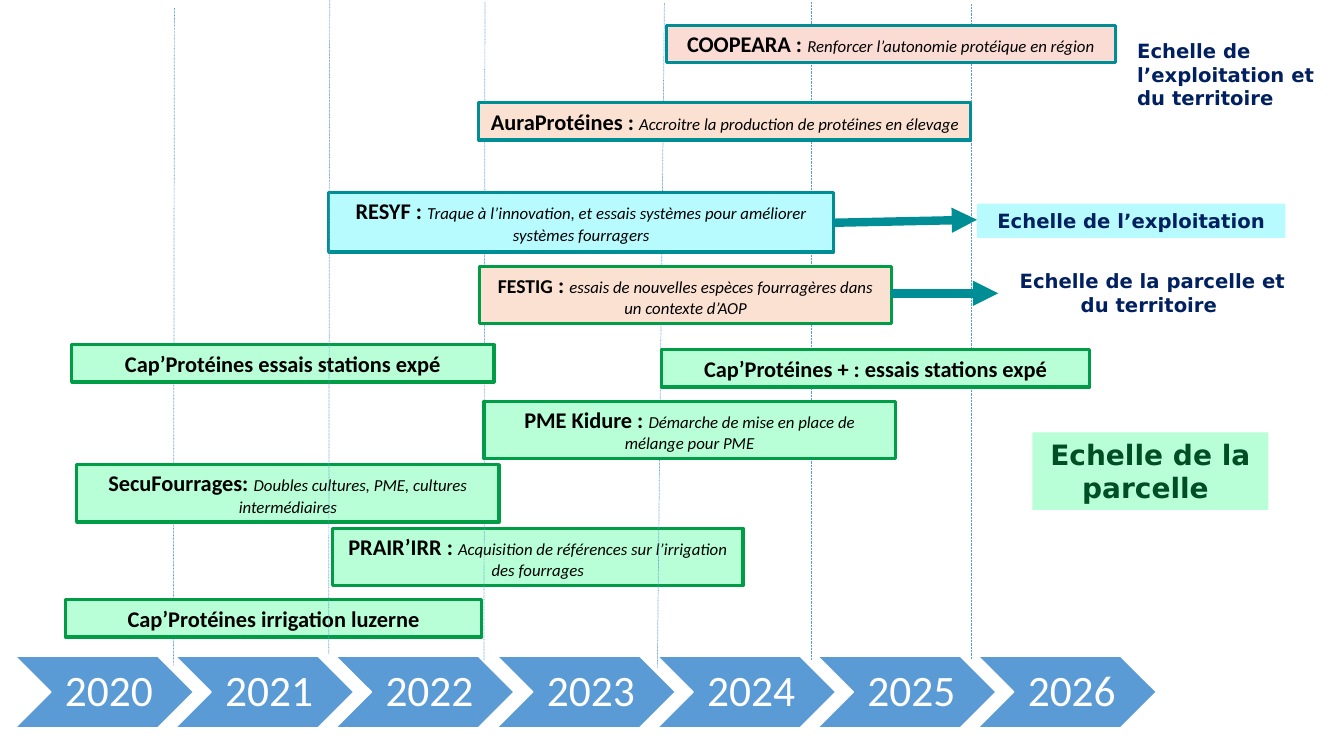
from lxml.etree import SubElement
from pptx import Presentation
from pptx.dml.color import RGBColor as RGB
from pptx.enum.dml import MSO_LINE
from pptx.enum.shapes import MSO_CONNECTOR, MSO_SHAPE
from pptx.enum.text import MSO_ANCHOR as ANCHOR, MSO_AUTO_SIZE as AUTO, PP_ALIGN as ALIGN
from pptx.oxml.ns import qn
from pptx.util import Emu, Pt

PX = 9144  # 100 px to the inch
WHITE, BLACK = RGB(255, 255, 255), RGB(0, 0, 0)
BLUE, NAVY = RGB(0x5B, 0x9B, 0xD5), RGB(0x00, 0x20, 0x60)
TEAL, GREEN = RGB(0x00, 0x8E, 0x96), RGB(0x00, 0x9C, 0x46)
MINT, CYAN = RGB(0xB8, 0xFF, 0xD8), RGB(0xB7, 0xFB, 0xFF)
PEACH, PINK = RGB(0xFB, 0xE1, 0xD2), RGB(0xFB, 0xDC, 0xD5)
FOREST = RGB(0x00, 0x4E, 0x23)

TITLE = dict(name="Calibri", size=Pt(16), bold=True)
DETAIL = dict(name="Calibri", size=Pt(12), italic=True)
YEAR = dict(name="Calibri", size=Pt(31))
SCALE = dict(name="DejaVu Sans", size=Pt(14), bold=True)
BOX_FRAME = dict(word_wrap=True, auto_size=AUTO.SHAPE_TO_FIT_TEXT,
                 vertical_anchor=ANCHOR.TOP)
YEAR_FRAME = dict(word_wrap=False, vertical_anchor=ANCHOR.MIDDLE,
                  margin_left=Emu(14 * PX), margin_right=Emu(5 * PX),
                  margin_top=Emu(5 * PX), margin_bottom=Emu(5 * PX))


def set_all(obj, values):
    for key, value in values.items():
        setattr(obj, key, value)


class Timeline:
    def __init__(self, slide):
        self.shapes = slide.shapes

    def text(self, sp, runs, color, frame, align=ALIGN.CENTER):
        tf = sp.text_frame
        set_all(tf, frame)
        p = tf.paragraphs[0]
        p.alignment = align
        for words, fmt in runs:
            r = p.add_run()
            r.text = words
            set_all(r.font, fmt)
            r.font.color.rgb = color
        return p

    def shape(self, kind, at, fill, line=None, width=2.25):
        sp = self.shapes.add_shape(kind, *(Emu(v * PX) for v in at))
        sp.shadow.inherit = False
        sp.fill.solid()
        sp.fill.fore_color.rgb = fill
        if line is None:
            sp.line.fill.background()
        else:
            sp.line.color.rgb = line
            sp.line.width = Pt(width)
        return sp

    def year(self, at, label):
        sp = self.shape(MSO_SHAPE.CHEVRON, at, BLUE, WHITE, 1)
        self.text(sp, [(label, YEAR)], WHITE, YEAR_FRAME).line_spacing = 0.9

    def project(self, at, fill, line, title, detail="", **change):
        sp = self.shape(MSO_SHAPE.RECTANGLE, at, fill, line)
        runs = [(title, TITLE | change)]
        if change:
            runs.append((" : ", TITLE))
        if detail:
            runs.append((detail, DETAIL))
        self.text(sp, runs, BLACK, BOX_FRAME)

    def scale(self, at, label, fill=None, color=NAVY, align=ALIGN.CENTER, **change):
        if fill is None:
            sp = self.shapes.add_textbox(*(Emu(v * PX) for v in at))
        else:
            sp = self.shape(MSO_SHAPE.RECTANGLE, at, fill)
        self.text(sp, [(label, SCALE | change)], color, BOX_FRAME, align)

    def line(self, ends, color, width):
        cn = self.shapes.add_connector(MSO_CONNECTOR.STRAIGHT, *(Emu(v * PX) for v in ends))
        cn.line.color.rgb = color
        cn.line.width = Pt(width)
        SubElement(cn._element.spPr, qn("a:effectLst"))
        return cn.line

    def guide(self, *ends):
        self.line(ends, BLUE, 0.5).dash_style = MSO_LINE.ROUND_DOT

    def arrow(self, *ends):
        ln = self.line(ends, TEAL, 6)
        SubElement(ln._get_or_add_ln(), qn("a:tailEnd"), type="triangle")


def main():
    prs = Presentation()
    prs.slide_width, prs.slide_height = Emu(1333 * PX), Emu(750 * PX)
    s = Timeline(prs.slides.add_slide(prs.slide_layouts[6]))

    # Years
    for i in range(7):
        s.year((15 + round(i * 955 / 6), 651, 177, 71), str(2020 + i))

    # Project behind the year guides
    s.project((330, 524, 407, 57), MINT, GREEN, "PRAIR’IRR : ",
              "Acquisition de références sur l’irrigation des fourrages")

    # Year guides
    for ends in ((173, 8, 172, 660), (481, 2, 480, 655), (659, 3, 652, 663),
                 (805, 2, 805, 654), (963, 4, 963, 654)):
        s.guide(*ends)

    # Plot-scale projects
    for at, title, detail in (
        ((65, 595, 413, 37), "Cap’Protéines irrigation luzerne", ""),
        ((71, 342, 419, 37), "Cap’Protéines essais stations expé", ""),
        ((76, 461, 419, 57), "SecuFourrages: ",
         "Doubles cultures, PME, cultures intermédiaires"),
        ((480, 398, 408, 57), "PME Kidure : ",
         "Démarche de mise en place de mélange pour PME"),
        ((656, 347, 425, 37), "Cap’Protéines + : essais stations expé", ""),
    ):
        s.project(at, MINT, GREEN, title, detail)

    # Farm and territory projects
    s.project((475, 102, 488, 37), PEACH, TEAL, "AuraProtéines : ",
              "Accroitre la production de protéines en élevage")
    s.project((661, 25, 445, 37), PINK, TEAL, "COOPEARA : ",
              "Renforcer l’autonomie protéique en région")
    s.project((326, 191, 501, 59), CYAN, TEAL, "RESYF : ",
              "Traque à l’innovation, et essais systèmes pour améliorer systèmes fourragers")
    s.project((476, 264, 408, 57), PEACH, GREEN, "FESTIG",
              "essais de nouvelles espèces fourragères dans un contexte d’AOP", size=Pt(14))

    # Guide in front of the projects
    s.guide(327, 0, 326, 649)

    # Scales
    s.scale((969, 202, 306, 34), "Echelle de l’exploitation", CYAN)
    s.scale((1024, 429, 234, 77), "Echelle de la parcelle ", MINT, FOREST, size=Pt(20))
    s.scale((1118, 34, 209, 81), "Echelle de l’exploitation et du territoire", align=ALIGN.LEFT)
    s.scale((990, 262, 306, 57), "Echelle de la parcelle et du territoire ")

    # Arrows from project to scale
    s.arrow(827, 221, 969, 218)
    s.arrow(884, 291, 990, 291)

    prs.save("out.pptx")


if __name__ == "__main__":
    main()
